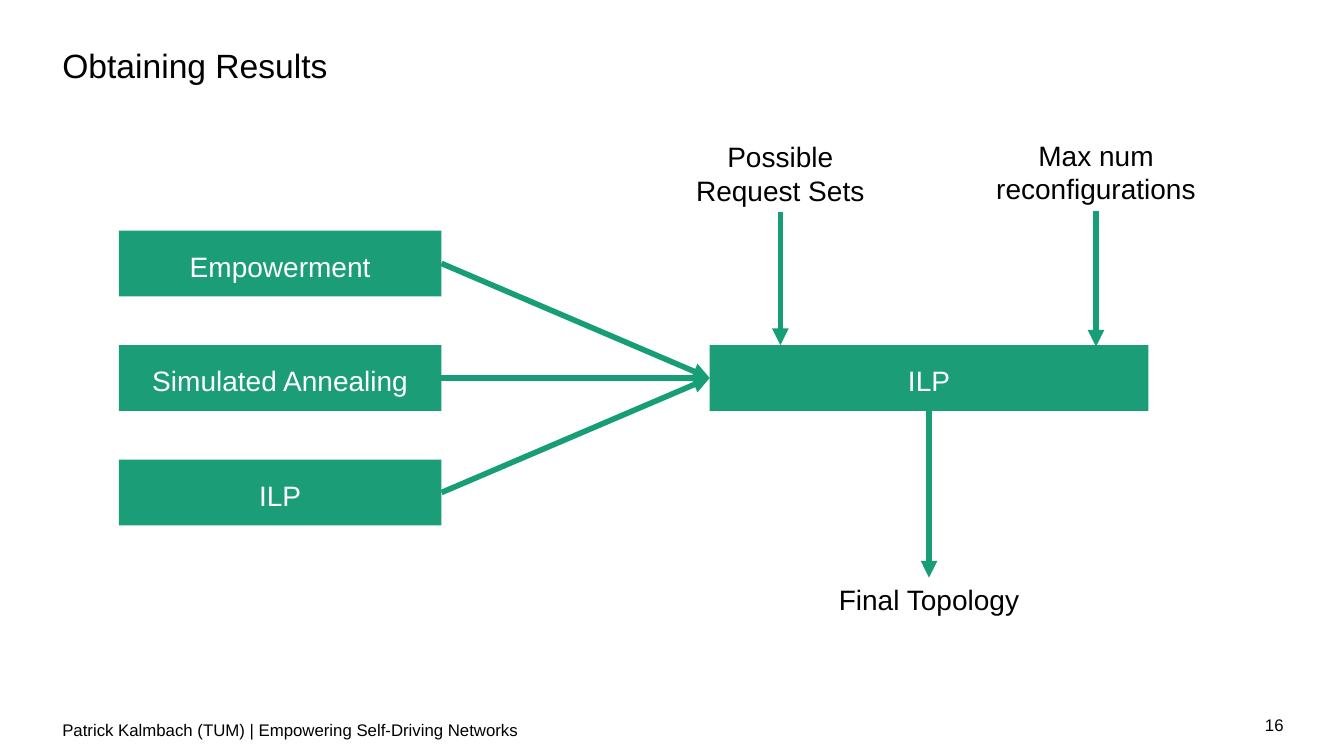
from lxml.etree import SubElement
from pptx import Presentation
from pptx.dml.color import RGBColor
from pptx.enum.shapes import MSO_CONNECTOR as Connector, MSO_SHAPE as Preset
from pptx.enum.text import MSO_ANCHOR as Anchor, PP_ALIGN as Align
from pptx.oxml.ns import qn
from pptx.util import Inches, Pt

COLORS = {"box": "1B9E77", "arrow": "179E76", "ink": "000000", "paper": "FFFFFF"}


def rgb(name):
    return RGBColor.from_string(COLORS[name])


def write(frame, text, size=20, color="ink", align=Align.CENTER,
          anchor=Anchor.MIDDLE, spacing=None):
    frame.word_wrap = True
    frame.vertical_anchor = anchor
    paragraph = frame.paragraphs[0]
    paragraph.text = text
    paragraph.alignment = align
    if spacing:
        paragraph.line_spacing = spacing
    font = paragraph.font
    font.name, font.size = "Arial", Pt(size)
    font.color.rgb = rgb(color)


class FlowSlide:
    """Lengths are percentages of the slide's width and height."""

    def __init__(self, deck):
        self.width, self.height = deck.slide_width, deck.slide_height
        self.shapes = deck.slides.add_slide(deck.slide_layouts[6]).shapes

    def scale(self, *lengths):
        sides = (self.width, self.height)
        return [round(sides[i % 2] * length / 100) for i, length in enumerate(lengths)]

    def text(self, text, left, top, width, height, **style):
        area = self.shapes.add_textbox(*self.scale(left, top, width, height))
        write(area.text_frame, text, **style)

    def label(self, text, center, top, width, height):
        self.text(text, center - width / 2, top, width, height)

    def box(self, text, left, middle, width, height):
        area = self.scale(left, middle - height / 2, width, height)
        box = self.shapes.add_shape(Preset.RECTANGLE, *area)
        box.shadow.inherit = False
        box.fill.solid()
        box.fill.fore_color.rgb = rgb("box")
        box.line.fill.background()
        write(box.text_frame, text, color="paper", spacing=1.14)

    def arrow(self, *ends):
        arrow = self.shapes.add_connector(Connector.STRAIGHT, *self.scale(*ends))
        arrow.line.width = Pt(4)
        arrow.line.color.rgb = rgb("arrow")
        SubElement(arrow.line._get_or_add_ln(), qn("a:tailEnd"), type="triangle")
        SubElement(arrow._element.spPr, qn("a:effectLst"))


def main():
    deck = Presentation()
    deck.slide_width, deck.slide_height = Inches(13.33), Inches(7.5)
    slide = FlowSlide(deck)

    margin, bar, footer_top = 3.9, 5.2, 93.87
    slide.text("Patrick Kalmbach (TUM) | Empowering Self-Driving Networks",
               margin, footer_top, 86.2, bar, size=12, align=Align.LEFT)
    slide.text("Obtaining Results", margin, 5.33, 78.4, bar,
               size=24, align=Align.LEFT, spacing=1.25)
    slide.text("16", 90.1, footer_top, 6.15, bar,
               size=12, align=Align.RIGHT, anchor=Anchor.TOP)

    middle, row_step, box_height = 50, 15.15, 8.7
    method_left, method_width = 8.85, 24
    solver_left, solver_width = 52.8, 32.65
    for row, method in enumerate(("Empowerment", "Simulated Annealing", "ILP"), -1):
        method_middle = middle + row * row_step
        slide.box(method, method_left, method_middle, method_width, box_height)
        slide.arrow(method_left + method_width, method_middle, solver_left, middle)
    slide.box("ILP", solver_left, middle, solver_width, box_height)

    input_height = 10.3
    for text, center, top, width, tip in (
        ("Possible Request Sets", 58.06, 17.75, 16.05, 45.65),
        ("Max num reconfigurations", 81.55, 17.6, 17.2, 45.85),
    ):
        slide.label(text, center, top, width, input_height)
        slide.arrow(center, top + input_height, center, tip)

    result_center, result_top = solver_left + solver_width / 2, 76.4
    slide.label("Final Topology", result_center, result_top, 22.7, 5.85)
    slide.arrow(result_center, middle + box_height / 2, result_center, result_top)

    deck.save("out.pptx")


if __name__ == "__main__":
    main()
